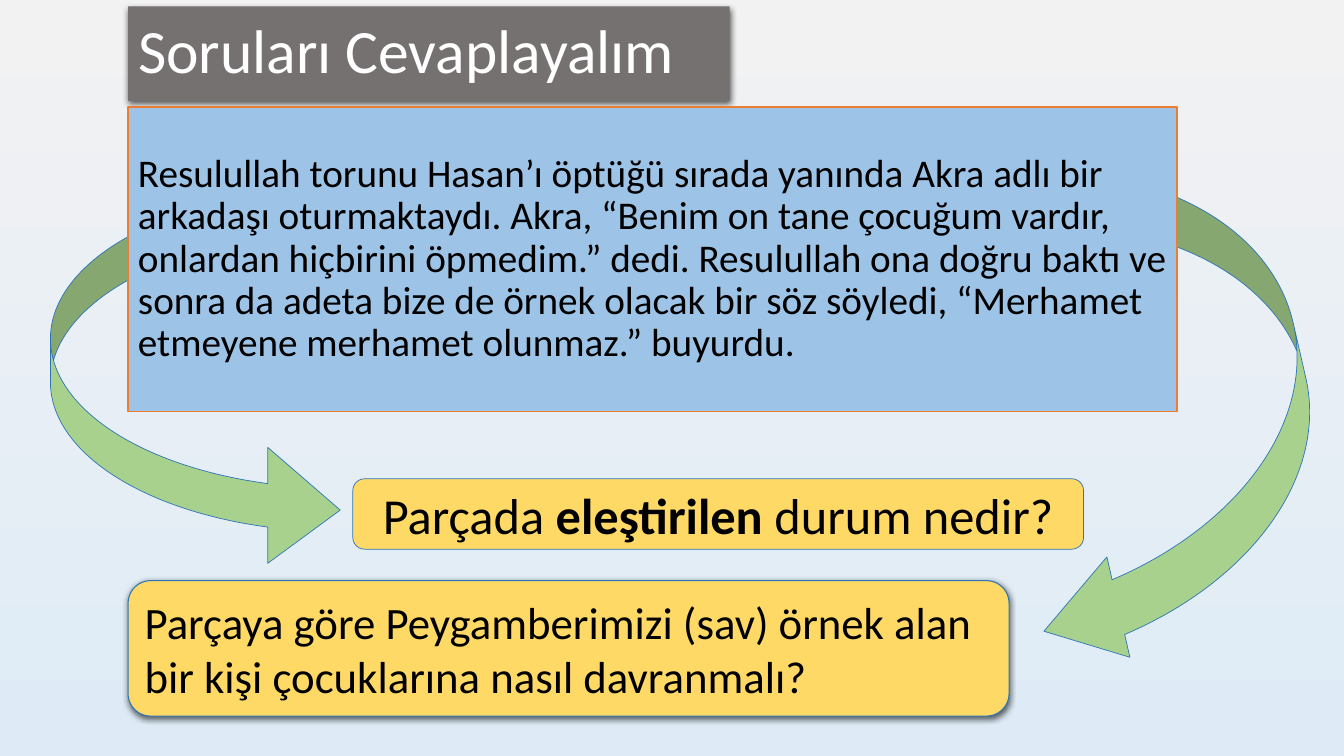
from lxml import etree
from pptx import Presentation
from pptx.dml.color import RGBColor
from pptx.enum.shapes import MSO_SHAPE
from pptx.enum.text import MSO_ANCHOR, MSO_AUTO_SIZE, PP_ALIGN
from pptx.oxml.ns import qn
from pptx.util import Emu, Pt

PX = 9525
TITLE_ONLY = 5
RECTANGLE = MSO_SHAPE.RECTANGLE
ROUNDED = MSO_SHAPE.ROUNDED_RECTANGLE
CURVED_ARROW = MSO_SHAPE.CURVED_RIGHT_ARROW
MIDDLE = MSO_ANCHOR.MIDDLE
NO_AUTOFIT = MSO_AUTO_SIZE.NONE
LEFT = PP_ALIGN.LEFT
CENTER = PP_ALIGN.CENTER

FONT = "Calibri"
COLORS = {
    "sky_top": "F2F2F2",
    "sky_bottom": "DEEBF7",
    "banner": "767171",
    "passage": "9DC3E6",
    "passage_line": "ED7D31",
    "question": "FFD966",
    "arrow": "A9D18E",
    "outline": "2E75B6",
    "black": "000000",
    "white": "FFFFFF",
}
PASSAGE = (
    "Resulullah torunu Hasan’ı öptüğü sırada yanında Akra adlı bir arkadaşı "
    "oturmaktaydı. Akra, “Benim on tane çocuğum vardır, onlardan hiçbirini "
    "öpmedim.” dedi. Resulullah ona doğru baktı ve sonra da adeta bize de örnek "
    "olacak bir söz söyledi, “Merhamet etmeyene merhamet olunmaz.” buyurdu."
)


def color(name):
    """Return the named colour."""
    return RGBColor.from_string(COLORS[name])


def set_attributes(target, values):
    """Set every attribute in values on the target."""
    for name, value in values.items():
        setattr(target, name, value)


def place(shape, box):
    """Move a shape to a left, top, width, height box in px."""
    names = ("left", "top", "width", "height")
    set_attributes(shape, {name: Emu(length * PX) for name, length in zip(names, box)})


def paint(shape, fill, line=None, weight=0.5):
    """Fill a shape, draw its outline and clear its shadow."""
    shape.shadow.inherit = False
    shape.fill.solid()
    shape.fill.fore_color.rgb = color(fill)
    if line:
        shape.line.color.rgb = color(line)
        shape.line.width = Pt(weight)
    else:
        shape.line.fill.background()


def add_shadow(shape):
    """Give a painted shape a soft shadow below it."""
    effects = shape._element.spPr.find(qn("a:effectLst"))
    shadow = etree.SubElement(
        effects, qn("a:outerShdw"), blurRad=str(Pt(4.5)), dist=str(Pt(1.5)),
        dir="5400000", algn="ctr", rotWithShape="0")
    tint = etree.SubElement(shadow, qn("a:srgbClr"), val=COLORS["black"])
    etree.SubElement(tint, qn("a:alpha"), val="63000")


def write(shape, runs, size, ink="black", alignment=LEFT, spacing=1.0):
    """Write one paragraph of (text, bold) runs, centred vertically."""
    frame = shape.text_frame
    set_attributes(frame, {
        "auto_size": NO_AUTOFIT, "word_wrap": True, "vertical_anchor": MIDDLE})
    paragraph = frame.paragraphs[0]
    set_attributes(paragraph, {"alignment": alignment, "line_spacing": spacing})
    for text, bold in runs:
        run = paragraph.add_run()
        run.text = text
        set_attributes(run.font, {"name": FONT, "size": Pt(size), "bold": bold})
        run.font.color.rgb = color(ink)


def add_panel(slide, kind, box, fill, line, weight):
    """Add a painted shape in the given box."""
    shape = slide.shapes.add_shape(kind, *(Emu(length * PX) for length in box))
    paint(shape, fill, line, weight)
    return shape


def add_background(slide):
    """Shade the slide from top to bottom."""
    fill = slide.background.fill
    fill.gradient()
    fill.gradient_angle = 270
    for stop, name in zip(fill.gradient_stops, ("sky_top", "sky_bottom")):
        stop.color.rgb = color(name)


def add_title(slide, box):
    """Turn the title placeholder into the banner."""
    title = slide.shapes.title
    place(title, box)
    paint(title, "banner")
    add_shadow(title)
    write(title, [("Soruları Cevaplayalım", False)], 44, "white", spacing=0.9)


def add_arrow(slide, box, adjustments, rotation=0, mirrored=False):
    """Add a curved arrow leading from the passage to a question."""
    arrow = add_panel(slide, CURVED_ARROW, box, "arrow", "outline", 0.5)
    for index, value in enumerate(adjustments):
        arrow.adjustments[index] = value
    arrow.rotation = rotation
    if mirrored:
        arrow._element.spPr.find(qn("a:xfrm")).set("flipH", "1")


def add_passage(slide, box):
    """Add the reading passage."""
    panel = add_panel(slide, RECTANGLE, box, "passage", "passage_line", 1)
    write(panel, [(PASSAGE, False)], 28, spacing=0.9)


def add_question(slide, box, runs, size, alignment=LEFT, weight=0.5, raised=False):
    """Add a rounded question box."""
    panel = add_panel(slide, ROUNDED, box, "question", "outline", weight)
    if raised:
        add_shadow(panel)
    write(panel, runs, size, alignment=alignment)


def main():
    """Build the slide and save it."""
    presentation = Presentation()
    presentation.slide_width = Emu(1280 * PX)
    presentation.slide_height = Emu(720 * PX)
    slide = presentation.slides.add_slide(presentation.slide_layouts[TITLE_ONLY])
    add_background(slide)
    add_title(slide, (122, 6, 573, 90))
    add_arrow(slide, (947, 134, 297, 488), (0.18, 0.33, 0.25), 347.1, True)
    add_arrow(slide, (48, 180, 276, 361), (0.15, 0.4, 0.25))
    add_passage(slide, (122, 102, 999, 290))
    add_question(
        slide, (336, 456, 696, 67),
        [("Parçada ", False), ("eleştirilen", True), (" durum nedir?", False)],
        36, CENTER)
    add_question(
        slide, (122, 553, 839, 129),
        [("Parçaya göre Peygamberimizi (sav) örnek alan bir kişi "
          "çocuklarına nasıl davranmalı?", False)],
        32, weight=0.75, raised=True)
    presentation.save("out.pptx")


if __name__ == "__main__":
    main()
